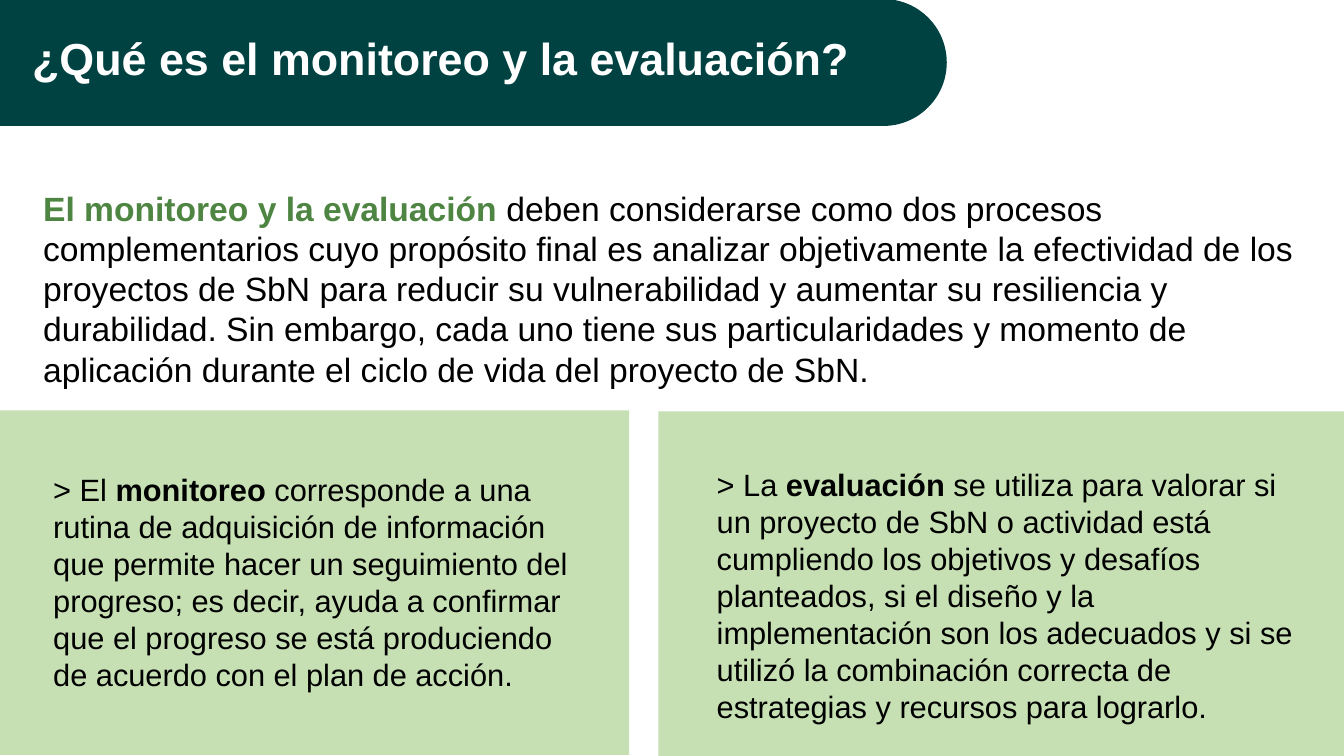
"""Build the slide that explains monitoring and evaluation."""
from pptx import Presentation
from pptx.dml.color import RGBColor
from pptx.enum.shapes import MSO_SHAPE
from pptx.enum.text import MSO_ANCHOR, PP_ALIGN
from pptx.util import Inches, Pt

DARK_TEAL = RGBColor(0x00, 0x42, 0x41)
PALE_GREEN = RGBColor(0xC6, 0xE0, 0xB4)
LEAF_GREEN = RGBColor(0x4E, 0x85, 0x42)
BLACK = RGBColor(0x00, 0x00, 0x00)
WHITE = RGBColor(0xFF, 0xFF, 0xFF)

WIDTH, HEIGHT = 13.33, 7.5
BANNER_TOP, BANNER_HEIGHT = -0.01, 1.26
PANEL_HEIGHT = 3.42
RIGHT_PANEL_LEFT = 6.53

PANELS = [
    (RIGHT_PANEL_LEFT, HEIGHT - PANEL_HEIGHT, WIDTH - RIGHT_PANEL_LEFT, PANEL_HEIGHT),
    (0, 4.07, 6.24, PANEL_HEIGHT),
]
BANNER = [
    (MSO_SHAPE.RECTANGLE, 1.48),
    (MSO_SHAPE.ROUNDED_RECTANGLE, 9.39),
]
TEXTS = [
    ((0.33, 1.81, 12.68, 1.72), 24, [
        ("El monitoreo y la evaluación ", LEAF_GREEN, True),
        ("deben considerarse como dos procesos complementarios cuyo propósito final es "
         "analizar objetivamente la efectividad de los proyectos de SbN para reducir su "
         "vulnerabilidad y aumentar su resiliencia y durabilidad. Sin embargo, cada uno "
         "tiene sus particularidades y momento de aplicación durante el ciclo de vida del "
         "proyecto de SbN.", BLACK, False),
    ]),
    ((0.43, 4.62, 5.47, 2.55), 22, [
        ("> El ", BLACK, False),
        ("monitoreo", BLACK, True),
        (" corresponde a una rutina de adquisición de información que permite hacer un "
         "seguimiento del progreso; es decir, ayuda a confirmar que el progreso se está "
         "produciendo de acuerdo con el plan de acción.", BLACK, False),
    ]),
    ((7.01, 4.57, 5.95, 2.55), 22, [
        ("> La ", BLACK, False),
        ("evaluación", BLACK, True),
        (" se utiliza para valorar si un proyecto de SbN o actividad está cumpliendo los "
         "objetivos y desafíos planteados, si el diseño y la implementación son los "
         "adecuados y si se utilizó la combinación correcta de estrategias y recursos "
         "para lograrlo.", BLACK, False),
    ]),
    ((0.22, 0.26, 8.51, 0.64), 32, [
        ("¿Qué es el monitoreo y la evaluación?", WHITE, True),
    ]),
]


def add_block(shapes, kind, box, color):
    shape = shapes.add_shape(kind, *map(Inches, box))
    shape.shadow.inherit = False
    shape.fill.solid()
    shape.fill.fore_color.rgb = color
    shape.line.fill.background()
    return shape


def add_text(slide, box, size, runs):
    frame = slide.shapes.add_textbox(*map(Inches, box)).text_frame
    frame.word_wrap = True
    frame.vertical_anchor = MSO_ANCHOR.TOP
    paragraph = frame.paragraphs[0]
    paragraph.alignment = PP_ALIGN.LEFT
    for text, color, bold in runs:
        run = paragraph.add_run()
        run.text = text
        run.font.name = "Arial"
        run.font.size = Pt(size)
        run.font.bold = bold
        run.font.color.rgb = color


def main():
    presentation = Presentation()
    presentation.slide_width = Inches(WIDTH)
    presentation.slide_height = Inches(HEIGHT)
    slide = presentation.slides.add_slide(presentation.slide_layouts[6])

    for box in PANELS:
        add_block(slide.shapes, MSO_SHAPE.RECTANGLE, box, PALE_GREEN)

    banner = slide.shapes.add_group_shape()
    for kind, width in BANNER:
        box = (0, BANNER_TOP, width, BANNER_HEIGHT)
        shape = add_block(banner.shapes, kind, box, DARK_TEAL)
        if kind == MSO_SHAPE.ROUNDED_RECTANGLE:
            shape.adjustments[0] = 0.5

    for box, size, runs in TEXTS:
        add_text(slide, box, size, runs)

    presentation.save("out.pptx")


if __name__ == "__main__":
    main()
